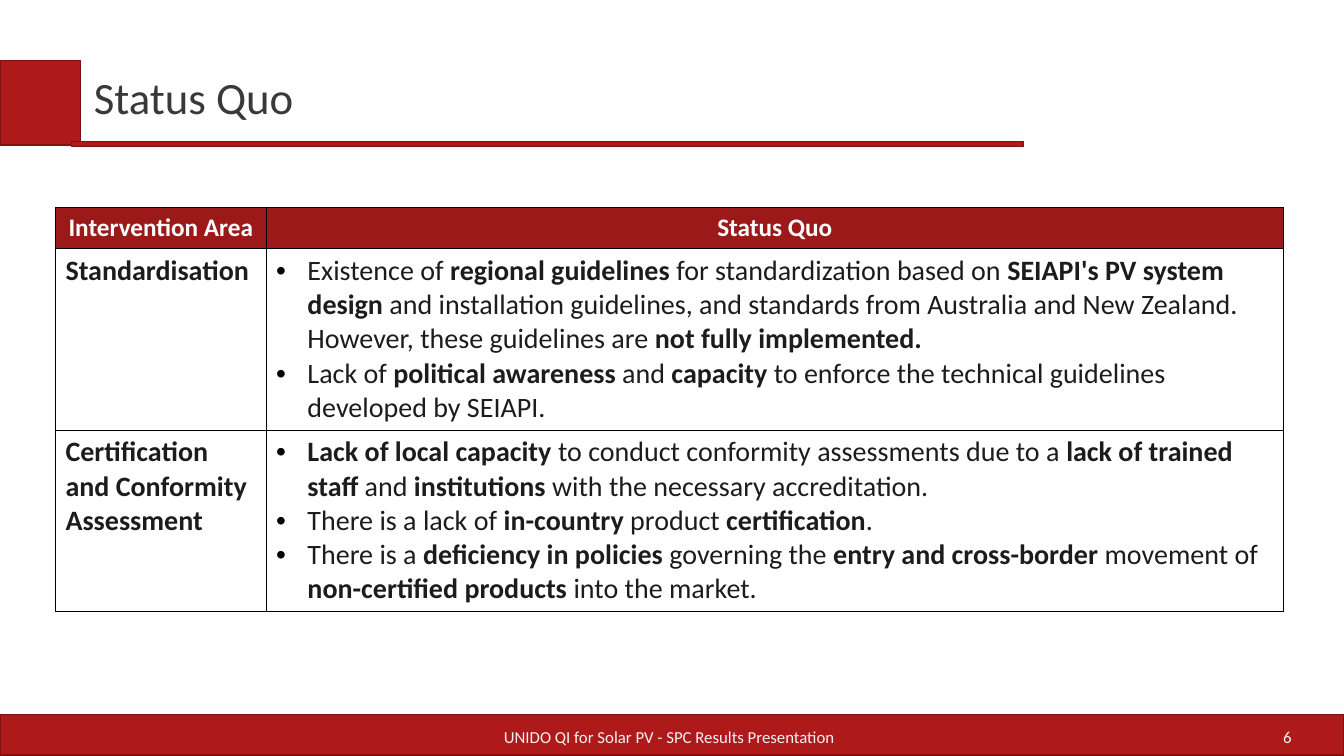
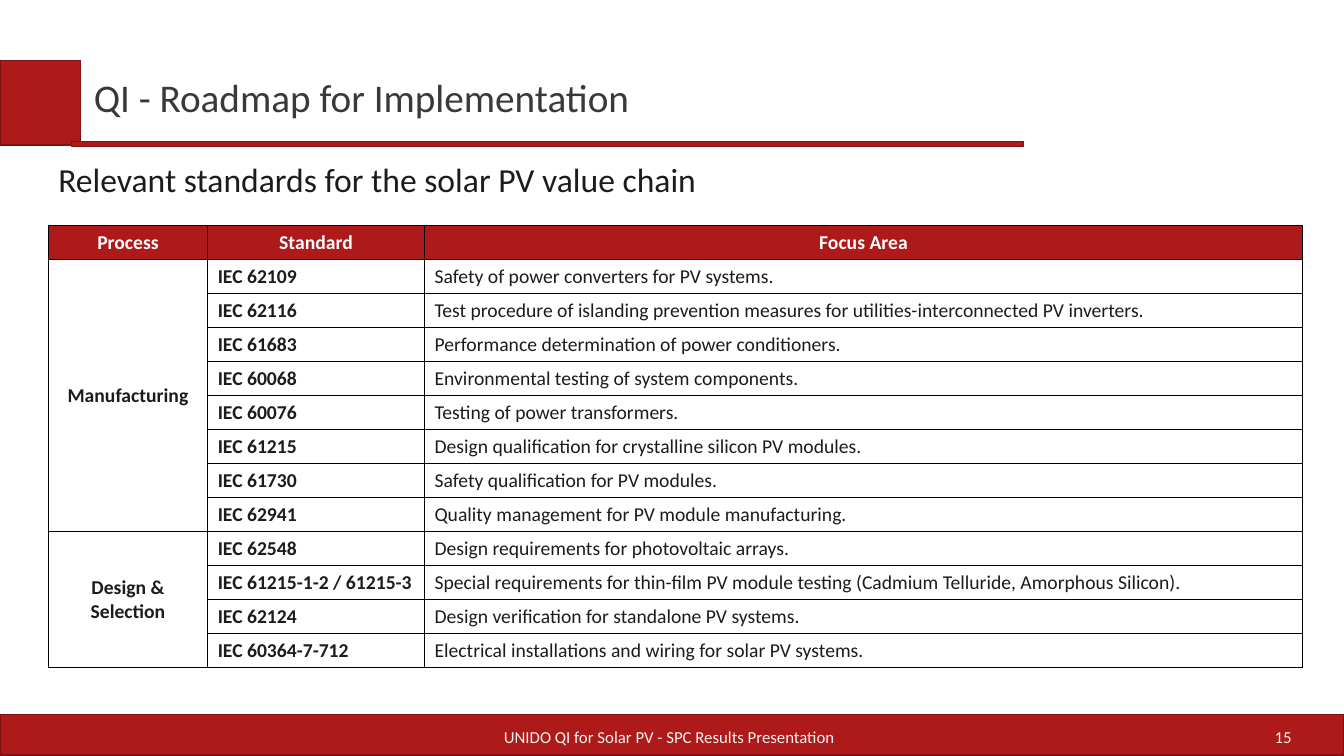
from lxml.etree import SubElement
from pptx import Presentation
from pptx.dml.color import RGBColor
from pptx.enum.shapes import MSO_SHAPE
from pptx.enum.text import MSO_ANCHOR, MSO_AUTO_SIZE, PP_ALIGN
from pptx.oxml.ns import qn
from pptx.util import Inches, Pt

RED = RGBColor(0xAE, 0x19, 0x19)
DEEP_RED = RGBColor(0x9B, 0x19, 0x19)
EDGE_RED = RGBColor(0x7E, 0x12, 0x12)
WHITE = RGBColor(0xFF, 0xFF, 0xFF)
PALE = RGBColor(0xF2, 0xF2, 0xF2)
TITLE_GREY = RGBColor(0x3A, 0x38, 0x38)
INK = RGBColor(0x1D, 0x1C, 0x1C)
BLACK = RGBColor(0, 0, 0)

FONT = "Calibri"
FOOTER = "UNIDO QI for Solar PV - SPC Results Presentation"
BANDS = [(0, 7.09, 13.33, 0.4), (0, 0.6, 0.8, 0.84), (0.71, 1.4, 9.44, 0.05)]
TITLE_BOX = (0.83, 0.62, 8.38, 0.74)
FOOTER_BOX = (3.61, 7.11, 6.06, 0.4)
NUMBER_BOX = (9.77, 7.11, 3.14, 0.4)

STATUS_HEADINGS = ["Intervention Area", "Status Quo"]
# Double asterisks enclose bold text.
STATUS = [
    ("Standardisation", [
        "Existence of **regional guidelines** for standardization based on "
        "**SEIAPI's PV system design** and installation guidelines, and standards from "
        "Australia and New Zealand. However, these guidelines are **not fully implemented.**",
        "Lack of **political awareness** and **capacity** to enforce the technical "
        "guidelines developed by SEIAPI.",
    ]),
    ("Certification and Conformity Assessment", [
        "**Lack of local capacity** to conduct conformity assessments due to a "
        "**lack of trained staff** and **institutions** with the necessary accreditation.",
        "There is a lack of **in-country** product **certification**.",
        "There is a **deficiency in policies** governing the **entry and cross-border** "
        "movement of **non-certified products** into the market.",
    ]),
]

STANDARD_HEADINGS = ["Process", "Standard", "Focus Area"]
STANDARDS = {
    "Manufacturing": [
        ("IEC 62109", "Safety of power converters for PV systems."),
        ("IEC 62116", "Test procedure of islanding prevention measures for "
                      "utilities-interconnected PV inverters."),
        ("IEC 61683", "Performance determination of power conditioners."),
        ("IEC 60068", "Environmental testing of system components."),
        ("IEC 60076", "Testing of power transformers."),
        ("IEC 61215", "Design qualification for crystalline silicon PV modules."),
        ("IEC 61730", "Safety qualification for PV modules."),
        ("IEC 62941", "Quality management for PV module manufacturing."),
    ],
    "Design & Selection": [
        ("IEC 62548", "Design requirements for photovoltaic arrays."),
        ("IEC 61215-1-2 / 61215-3", "Special requirements for thin-film PV module testing "
                                    "(Cadmium Telluride, Amorphous Silicon)."),
        ("IEC 62124", "Design verification for standalone PV systems."),
        ("IEC 60364-7-712", "Electrical installations and wiring for solar PV systems."),
    ],
}


def inches(box):
    return [Inches(length) for length in box]


def style_runs(paragraph, size, color, bold=False):
    for run in paragraph.runs:
        run.font.name = FONT
        run.font.size = Pt(size)
        run.font.color.rgb = color
        run.font.bold = bold


def fill_frame(frame, text, size, color, align=PP_ALIGN.LEFT, line_spacing=None):
    frame.text = text
    frame.word_wrap = True
    frame.auto_size = MSO_AUTO_SIZE.NONE
    frame.vertical_anchor = MSO_ANCHOR.MIDDLE
    frame.margin_left = frame.margin_right = Inches(0.1)
    frame.margin_top = frame.margin_bottom = Inches(0.05)
    paragraph = frame.paragraphs[0]
    paragraph.alignment = align
    paragraph.line_spacing = line_spacing
    style_runs(paragraph, size, color)


def add_label(slide, box, *text_style):
    fill_frame(slide.shapes.add_textbox(*inches(box)).text_frame, *text_style)


def add_base_slide(deck, title, title_size, number):
    """Add a slide with the red bands, title, footer and slide number."""
    slide = deck.slides.add_slide(deck.slide_layouts[5])
    for box in BANDS:
        band = slide.shapes.add_shape(MSO_SHAPE.RECTANGLE, *inches(box))
        band.shadow.inherit = False
        band.fill.solid()
        band.fill.fore_color.rgb = RED
        band.line.color.rgb = EDGE_RED
        band.line.width = Pt(0.85)
    heading = slide.shapes.title
    heading.left, heading.top, heading.width, heading.height = inches(TITLE_BOX)
    fill_frame(heading.text_frame, title, title_size, TITLE_GREY, PP_ALIGN.LEFT, 0.9)
    add_label(slide, FOOTER_BOX, FOOTER, 12, PALE, PP_ALIGN.CENTER)
    add_label(slide, NUMBER_BOX, str(number), 12, PALE, PP_ALIGN.RIGHT)
    return slide


def outline_cell(cell):
    properties = cell._tc.get_or_add_tcPr()
    for side in ("lnL", "lnR", "lnT", "lnB"):
        border = SubElement(properties, qn(f"a:{side}"), w=str(Pt(0.75)))
        fill = SubElement(border, qn("a:solidFill"))
        SubElement(fill, qn("a:srgbClr"), val=str(BLACK))


def set_cell(cell, text, size, color=INK, bold=False, align=PP_ALIGN.LEFT,
             anchor=MSO_ANCHOR.TOP):
    cell.text = text
    cell.vertical_anchor = anchor
    cell.text_frame.paragraphs[0].alignment = align
    style_runs(cell.text_frame.paragraphs[0], size, color, bold)


def add_grid(slide, left, top, widths, heights, headings, size, heading_fill):
    """Add an outlined table with a filled heading row."""
    box = (left, top, sum(widths), sum(heights))
    table = slide.shapes.add_table(len(heights), len(widths), *inches(box)).table
    table.horz_banding = False
    for column, width in zip(table.columns, widths):
        column.width = Inches(width)
    for row, height in zip(table.rows, heights):
        row.height = Inches(height)
    for cell in table.iter_cells():
        outline_cell(cell)
        cell.fill.background()
    for cell, heading in zip(table.rows[0].cells, headings):
        cell.fill.solid()
        cell.fill.fore_color.rgb = heading_fill
        set_cell(cell, heading, size, WHITE, True, PP_ALIGN.CENTER, MSO_ANCHOR.MIDDLE)
    return table


def add_bullet(paragraph, indent=0.31):
    properties = paragraph._p.get_or_add_pPr()
    properties.set("marL", str(Inches(indent)))
    properties.set("indent", str(Inches(-indent)))
    color = SubElement(properties, qn("a:buClr"))
    SubElement(color, qn("a:srgbClr"), val=str(BLACK))
    SubElement(properties, qn("a:buFont"), typeface="Arial")
    SubElement(properties, qn("a:buChar"), char="•")


def set_findings(cell, findings, size):
    frame = cell.text_frame
    for index, finding in enumerate(findings):
        paragraph = frame.add_paragraph() if index else frame.paragraphs[0]
        add_bullet(paragraph)
        for part, wording in enumerate(finding.split("**")):
            if wording:
                run = paragraph.add_run()
                run.text = wording
                run.font.name = FONT
                run.font.size = Pt(size)
                run.font.color.rgb = INK
                run.font.bold = part % 2 == 1


def add_status_slide(deck):
    slide = add_base_slide(deck, "Status Quo", 32, 6)
    table = add_grid(slide, 0.55, 2.06, [2.09, 10.09], [0.4, 1.8, 1.8],
                     STATUS_HEADINGS, 18, DEEP_RED)
    for row, (area, findings) in enumerate(STATUS, start=1):
        set_cell(table.cell(row, 0), area, 20, bold=True)
        set_findings(table.cell(row, 1), findings, 20)


def add_roadmap_slide(deck):
    slide = add_base_slide(deck, "QI - Roadmap for Implementation", 28, 15)
    add_label(slide, (0.48, 1.54, 6.84, 0.53),
              "Relevant standards for the solar PV value chain", 24, INK, PP_ALIGN.LEFT, 0.9)
    row_count = 1 + sum(len(entries) for entries in STANDARDS.values())
    table = add_grid(slide, 0.48, 2.24, [1.58, 2.15, 8.71], [0.33] * row_count,
                     STANDARD_HEADINGS, 14, RED)
    row = 1
    for process, entries in STANDARDS.items():
        process_cell = table.cell(row, 0)
        process_cell.merge(table.cell(row + len(entries) - 1, 0))
        set_cell(process_cell, process, 14, INK, True, PP_ALIGN.CENTER, MSO_ANCHOR.MIDDLE)
        for row, (standard, focus) in enumerate(entries, start=row):
            set_cell(table.cell(row, 1), standard, 14, bold=True)
            set_cell(table.cell(row, 2), focus, 14)
        row += 1


def main():
    deck = Presentation()
    deck.slide_width = Inches(13.33)
    deck.slide_height = Inches(7.5)
    add_status_slide(deck)
    add_roadmap_slide(deck)
    deck.save("out.pptx")


if __name__ == "__main__":
    main()
